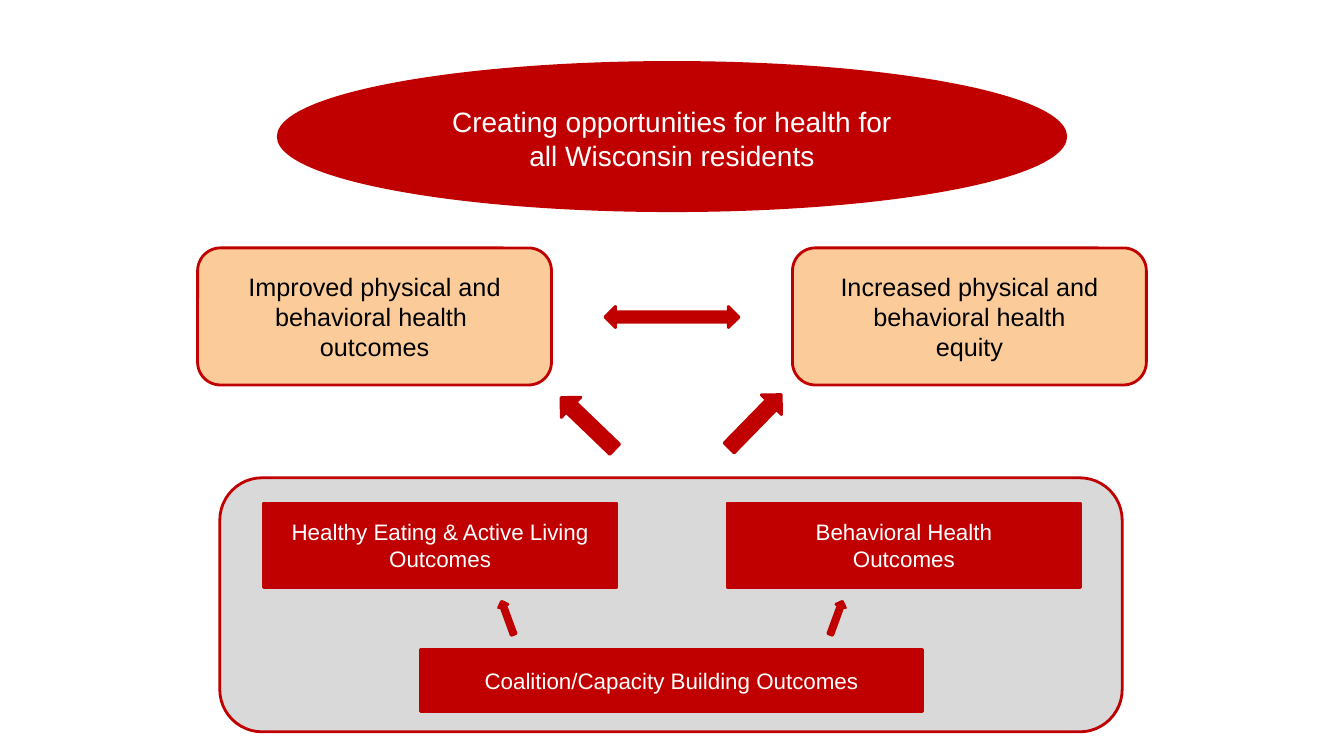
"""Build a slide showing how coalition outcomes lead to health for all residents."""
import pptx
import pptx.dml.color
import pptx.enum.shapes
import pptx.enum.text
import pptx.util

Inches = pptx.util.Inches
Pt = pptx.util.Pt
MSO_SHAPE = pptx.enum.shapes.MSO_SHAPE
RGBColor = pptx.dml.color.RGBColor

RED = RGBColor(0xC0, 0x00, 0x00)
PEACH = RGBColor(0xFB, 0xCC, 0x9A)
GRAY = RGBColor(0xD9, 0xD9, 0xD9)
BLACK = RGBColor(0x00, 0x00, 0x00)
WHITE = RGBColor(0xFF, 0xFF, 0xFF)


def add_figure(parent, preset, left, top, width, height, fill=RED, rotation=0):
    figure = parent.add_shape(
        preset, Inches(left), Inches(top), Inches(width), Inches(height))
    figure.rotation = rotation
    figure.shadow.inherit = False
    figure.fill.solid()
    figure.fill.fore_color.rgb = fill
    figure.line.color.rgb = RED
    figure.line.width = Pt(2)
    return figure


def write_centered(figure, text, size, color):
    frame = figure.text_frame
    frame.word_wrap = True
    frame.text = text
    for paragraph in frame.paragraphs:
        paragraph.alignment = pptx.enum.text.PP_ALIGN.CENTER
        for run in paragraph.runs:
            run.font.name = "Arial"
            run.font.size = Pt(size)
            run.font.color.rgb = color


deck = pptx.Presentation()
deck.slide_width = Inches(13.33)
deck.slide_height = Inches(7.5)
slide = deck.slides.add_slide(deck.slide_layouts[6])
shapes = slide.shapes

add_figure(shapes, MSO_SHAPE.OVAL, 2.76, 0.62, 7.81, 1.47)
vision = shapes.add_textbox(Inches(4.36), Inches(0.99), Inches(4.61), Inches(0.77))
write_centered(
    vision, "Creating opportunities for health for all Wisconsin residents", 20, WHITE)

for left, goal_text in [
    (1.96, "Improved physical and\nbehavioral health \noutcomes"),
    (7.86, "Increased physical and\nbehavioral health\nequity"),
]:
    goal = add_figure(
        shapes, MSO_SHAPE.ROUNDED_RECTANGLE, left, 2.46, 3.51, 1.36, PEACH)
    write_centered(goal, goal_text, 18, BLACK)

for left, top, rotation in [(7.12, 4.04, 314.3), (5.46, 4.06, 223.9)]:
    add_figure(shapes, MSO_SHAPE.RIGHT_ARROW, left, top, 0.74, 0.28, rotation=rotation)
add_figure(shapes, MSO_SHAPE.LEFT_RIGHT_ARROW, 6, 3.04, 1.33, 0.21)

program = shapes.add_group_shape().shapes
add_figure(program, MSO_SHAPE.ROUNDED_RECTANGLE, 2.18, 4.74, 8.95, 2.52, GRAY)
for left, top, width, height, outcome_text in [
    (2.61, 4.99, 3.51, 0.84, "Healthy Eating & Active Living\nOutcomes"),
    (7.21, 4.99, 3.51, 0.84, "Behavioral Health\nOutcomes"),
    (4.17, 6.44, 4.98, 0.62, "Coalition/Capacity Building Outcomes"),
]:
    outcome = add_figure(program, MSO_SHAPE.RECTANGLE, left, top, width, height)
    write_centered(outcome, outcome_text, 16, WHITE)
for left, rotation in [(4.86, 249.9), (8.12, 290.1)]:
    add_figure(program, MSO_SHAPE.RIGHT_ARROW, left, 6.08, 0.35, 0.1, rotation=rotation)

deck.save("out.pptx")
